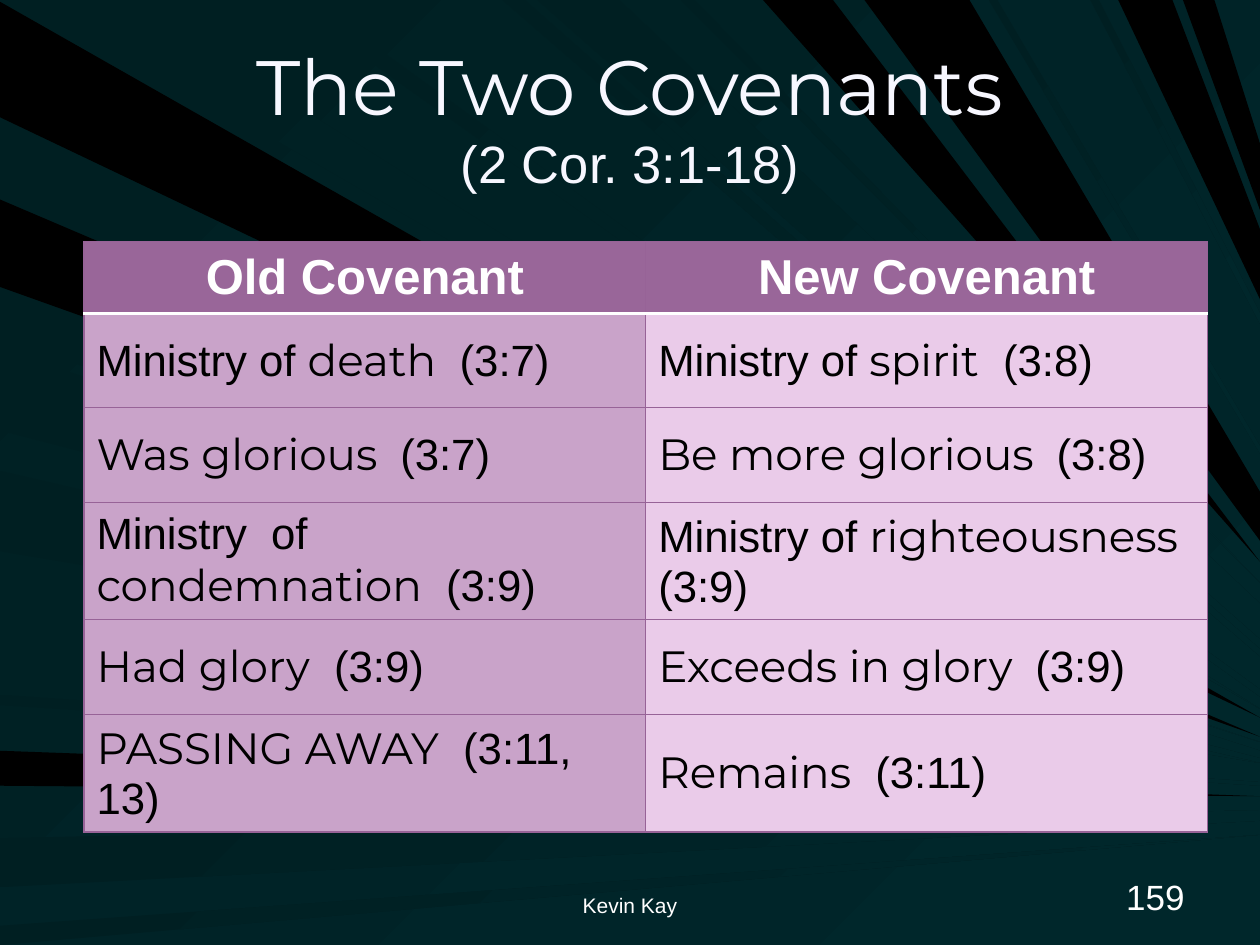
"""Build the slide that compares the two covenants over a background of dark rays."""
from pptx import Presentation
from pptx import util as u
from pptx.dml.color import RGBColor
from pptx.enum import text
from pptx.oxml import parse_xml
from pptx.oxml.ns import nsdecls

THEME = {
    "sans": "Arial", "display": "Montserrat",
    "night": "001F22", "teal": "00272B", "black": "000000", "white": "FFFFFF",
    "title": "F7F7FF", "header": "996699", "old": "C9A3C9", "new": "EACBE9", "border": "976397",
    "title_size": 44, "subtitle_size": 30, "header_size": 28, "body_size": 25,
    "number_size": 20, "footer_size": 12,
}
SANS, DISPLAY = THEME["sans"], THEME["display"]
WIDTH, HEIGHT = 720, 540

# edge the ray leaves, start and stop along it, height and half spread at the right edge, tone
RAYS = [
    ("left", 1, 67, 410, 0, "black"),
    ("top", 19, 73, 405, 0, "night"),
    ("left", 429, 449, 455, 0, "black"),
    ("left", 479, 507, 466, 3, "night"),
    ("left", 529, 540, 477, 0, "night"),
    ("left", 186, 194, 424, 0, "night"),
    ("left", 114, 164, 421, 0, "black"),
    ("top", 287, 300, 373, 2, "night"),
    ("top", 307, 354, 355, 10, "night"),
    ("top", 389, 397, 333, 0, "night"),
    ("top", 436, 476, 321, 0, "black"),
    ("top", 639, 670, 151, 20, "black"),
    ("top", 676, 694, 101, 19, "black"),
    ("left", 200, 246, 431, 2, "night"),
    ("left", 269, 315, 436, 0, "night"),
    ("left", 397, 403, 448, 1, "night"),
    ("top", 162, 178, 396, 2, "night"),
    ("top", 494, 554, 295, 14, "black"),
    ("top", 565, 570, 257, 2, "night"),
    ("top", 623, 628, 182, 3, "night"),
]

HEADERS = ["Old Covenant", "New Covenant"]
# opening in the sans face, middle in the display face, reference in the sans face
COMPARISONS = [
    [("Ministry of ", "death ", " (3:7)"), ("Ministry of ", "spirit", "  (3:8)")],
    [("", "Was glorious  ", "(3:7)"), ("", "Be more glorious  ", "(3:8)")],
    [("Ministry  of ", "condemnation", "  (3:9)"), ("Ministry of ", "righteousness", "  (3:9)")],
    [("", "Had glory", "  (3:9)"), ("", "Exceeds in glory  ", "(3:9)")],
    [("", "PASSING AWAY", "  (3:11, 13)"), ("", "Remains", "  (3:11)")],
]
ROW_HEIGHTS = [41, 54, 54, 67, 54, 67]
TABLE_LEFT, TABLE_TOP, COLUMN_WIDTH = 48, 138, 321


def color(value):
    return RGBColor.from_string(value)


def fill_gradient(fill):
    fill.gradient()
    fill.gradient_angle = 315
    for stop, tone in zip(fill.gradient_stops, ("night", "teal")):
        stop.color.rgb = color(THEME[tone])


def add_ray(slide, edge, start, stop, tip, spread, tone):
    if edge == "top":
        corners = [(start, 0), (WIDTH, tip + spread), (WIDTH, tip - spread), (stop, 0)]
    else:
        corners = [(0, start), (WIDTH, tip - spread), (WIDTH, tip + spread), (0, stop)]
    corners = [(u.Pt(x), u.Pt(y)) for x, y in corners]
    builder = slide.shapes.build_freeform(*corners[0])
    builder.add_line_segments(corners[1:])
    shape = builder.convert_to_shape()
    shape.shadow.inherit = False
    shape.line.fill.background()
    if tone == "black":
        shape.fill.solid()
        shape.fill.fore_color.rgb = color(THEME[tone])
    else:
        fill_gradient(shape.fill)


def add_run(paragraph, words, size, tone, face=SANS, bold=False):
    run = paragraph.add_run()
    run.text = words
    run.font.name, run.font.size, run.font.bold = face, u.Pt(THEME[size]), bold
    run.font.color.rgb = color(THEME[tone])


def add_box(slide, box, anchor, alignment):
    frame = slide.shapes.add_textbox(*map(u.Pt, box)).text_frame
    frame.word_wrap = True
    frame.vertical_anchor = anchor
    frame.paragraphs[0].alignment = alignment
    return frame.paragraphs[0]


def style_cell(cell, tone, white_side=None):
    properties = cell._tc.get_or_add_tcPr()
    for side in "LRTB":
        value, width = (THEME["white"], 2) if side == white_side else (THEME["border"], 0.75)
        properties.append(parse_xml(
            f'<a:ln{side} {nsdecls("a")} w="{u.Pt(width)}"><a:solidFill>'
            f'<a:srgbClr val="{value}"/></a:solidFill></a:ln{side}>'))
    cell.fill.solid()
    cell.fill.fore_color.rgb = color(THEME[tone])
    cell.vertical_anchor = text.MSO_ANCHOR.MIDDLE


def add_comparison_table(slide):
    size = (TABLE_LEFT, TABLE_TOP, COLUMN_WIDTH * len(HEADERS), sum(ROW_HEIGHTS))
    table = slide.shapes.add_table(len(ROW_HEIGHTS), len(HEADERS), *map(u.Pt, size)).table
    for row, height in zip(table.rows, ROW_HEIGHTS):
        row.height = u.Pt(height)
    for column, header in enumerate(HEADERS):
        cell = table.cell(0, column)
        style_cell(cell, "header", "B")
        paragraph = cell.text_frame.paragraphs[0]
        paragraph.alignment = text.PP_ALIGN.CENTER
        add_run(paragraph, header, "header_size", "white", bold=True)
    for row, entries in enumerate(COMPARISONS, 1):
        for column, (parts, tone) in enumerate(zip(entries, ("old", "new"))):
            cell = table.cell(row, column)
            style_cell(cell, tone, "T" if row == 1 else None)
            for words, face in zip(parts, (SANS, DISPLAY, SANS)):
                if words:
                    add_run(cell.text_frame.paragraphs[0], words, "body_size", "black", face)


def main():
    presentation = Presentation()
    presentation.slide_width, presentation.slide_height = u.Pt(WIDTH), u.Pt(HEIGHT)
    slide = presentation.slides.add_slide(presentation.slide_layouts[6])
    fill_gradient(slide.background.fill)
    for ray in RAYS:
        add_ray(slide, *ray)

    anchors, aligns = text.MSO_ANCHOR, text.PP_ALIGN
    title = add_box(slide, (36, 21.6, 648, 90), anchors.MIDDLE, aligns.CENTER)
    add_run(title, "The Two Covenants", "title_size", "title", DISPLAY)
    title.add_line_break()
    add_run(title, "(2 Cor. 3:1-18)", "subtitle_size", "title")

    add_comparison_table(slide)

    number = add_box(slide, (516, 492, 168, 36), anchors.BOTTOM, aligns.RIGHT)
    add_run(number, "159", "number_size", "white")
    footer = add_box(slide, (246, 492, 228, 36), anchors.BOTTOM, aligns.CENTER)
    add_run(footer, "Kevin Kay", "footer_size", "white")
    presentation.save("out.pptx")


if __name__ == "__main__":
    main()
